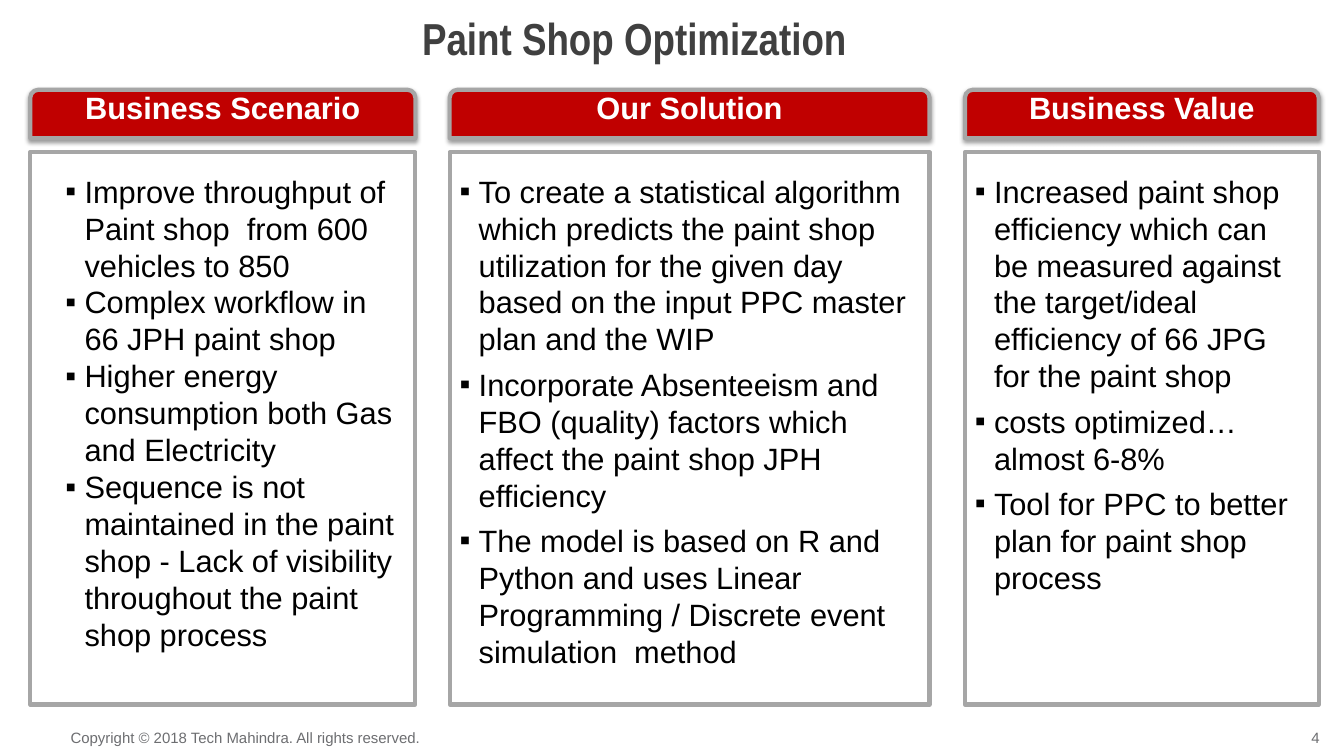
import pptx
import pptx.util
import pptx.dml.color
import pptx.enum.shapes
import pptx.enum.text
import pptx.oxml
import pptx.oxml.ns

PX = 9144  # EMU per px, 100 px to the inch
SHAPE = pptx.enum.shapes.MSO_SHAPE
ALIGN = pptx.enum.text.PP_ALIGN
ANCHOR = pptx.enum.text.MSO_ANCHOR

HEADER_TOP, HEADER_H = 89, 48
BODY_TOP, BODY_H = 151, 548

# left, width, text indent, space between bullets, heading, bullets
COLUMNS = [
    (30, 382, 44, 0, "Business Scenario", [
        "Improve throughput of Paint shop  from 600 vehicles to 850",
        "Complex workflow in 66 JPH paint shop",
        "Higher energy consumption both Gas and Electricity",
        "Sequence is not maintained in the paint shop - Lack of visibility "
        "throughout the paint shop process"]),
    (446, 476, 19, 6, "Our Solution", [
        "To create a statistical algorithm which predicts the paint shop "
        "utilization for the given day based on the input PPC master plan and the WIP",
        "Incorporate Absenteeism and FBO (quality) factors which affect the "
        "paint shop JPH efficiency",
        "The model is based on R and Python and uses Linear Programming / "
        "Discrete event simulation  method"]),
    (957, 351, 19, 6, "Business Value", [
        "Increased paint shop efficiency which can be measured against the "
        "target/ideal efficiency of 66 JPG for the paint shop",
        "costs optimized… almost 6-8%",
        "Tool for PPC to better plan for paint shop process"]),
]


def color(value):
    return pptx.dml.color.RGBColor.from_string(value)


def box(*lengths):
    return [n * PX for n in lengths]


def xml(text):
    ns = pptx.oxml.ns.nsdecls("a")
    return pptx.oxml.parse_xml(text.replace(" ", f" {ns} ", 1))


def frame(sp, insets, anchor, wrap=True):
    tf = sp.text_frame
    tf.word_wrap = wrap
    tf.vertical_anchor = anchor
    tf.margin_left, tf.margin_top, tf.margin_right, tf.margin_bottom = box(*insets)
    return tf


def write(p, text, size=22, font="Arial", fill="000000", bold=False,
          align=ALIGN.LEFT, before=0, after=0, spacing=None, indent=None):
    p.alignment = align
    p.space_before = pptx.util.Pt(before)
    p.space_after = pptx.util.Pt(after)
    if spacing:
        p.line_spacing = pptx.util.Pt(spacing)
    if indent:
        pPr = p._p.get_or_add_pPr()
        pPr.set("marL", str(indent * PX))
        pPr.set("indent", str(-19 * PX))
        pPr.append(xml('<a:buFont typeface="Arial"/>'))
        pPr.append(xml('<a:buChar char="▪"/>'))
    r = p.add_run()
    r.text = text
    r.font.size = pptx.util.Pt(size)
    r.font.name = font
    r.font.bold = bold
    r.font.color.rgb = color(fill)


def panel(s, kind, lengths, fill):
    sp = s.shapes.add_shape(kind, *box(*lengths))
    sp.shadow.inherit = False
    sp.fill.solid()
    sp.fill.fore_color.rgb = color(fill)
    sp.line.color.rgb = color("A6A6A6")
    sp.line.width = pptx.util.Pt(3)
    return sp


def column(s, left, width, indent, gap, heading, bullets):
    # Body panel
    sp = panel(s, SHAPE.RECTANGLE, (left, BODY_TOP, width, BODY_H), "FFFFFF")
    tf = frame(sp, (10, 20, 10, 5), ANCHOR.TOP)
    for i, text in enumerate(bullets):
        p = tf.add_paragraph() if i else tf.paragraphs[0]
        write(p, text, indent=indent, before=gap if i else 0)

    # Header tab with a soft shadow
    sp = panel(s, SHAPE.ROUND_2_SAME_RECTANGLE,
               (left, HEADER_TOP, width, HEADER_H), "C00000")
    effects = sp._element.spPr.find(pptx.oxml.ns.qn("a:effectLst"))
    effects.append(xml(
        '<a:outerShdw blurRad="39370" dist="20320" dir="5400000" rotWithShape="0">'
        '<a:srgbClr val="000000"><a:alpha val="38000"/></a:srgbClr></a:outerShdw>'))
    tf = frame(sp, (10, 10, 10, 5), ANCHOR.MIDDLE)
    write(tf.paragraphs[0], heading, fill="FFFFFF", bold=True,
          align=ALIGN.CENTER, after=6, spacing=11.6)


def title(s, text, lengths):
    sp = s.shapes.title
    sp.left, sp.top, sp.width, sp.height = box(*lengths)
    tf = frame(sp, (10, 5, 10, 5), ANCHOR.TOP)
    write(tf.paragraphs[0], text, size=32, font="Arial Narrow",
          fill="404040", bold=True, align=ALIGN.CENTER)


def footer(s, text, lengths, align):
    sp = s.shapes.add_textbox(*box(*lengths))
    tf = frame(sp, (0, 0, 0, 0), ANCHOR.MIDDLE, wrap=True)
    write(tf.paragraphs[0], text, size=10.7, fill="6D6E71", align=align)


def main():
    prs = pptx.Presentation()
    prs.slide_width, prs.slide_height = box(1333, 750)
    s = prs.slides.add_slide(prs.slide_layouts[5])
    title(s, "Paint Shop Optimization", (159, 6, 941, 64))
    for spec_row in COLUMNS:
        column(s, *spec_row)
    footer(s, "Copyright © 2018 Tech Mahindra. All rights reserved.",
           (70, 723, 352, 18), ALIGN.LEFT)
    footer(s, "4", (1291, 723, 18, 18), ALIGN.RIGHT)
    prs.save("out.pptx")


if __name__ == "__main__":
    main()
